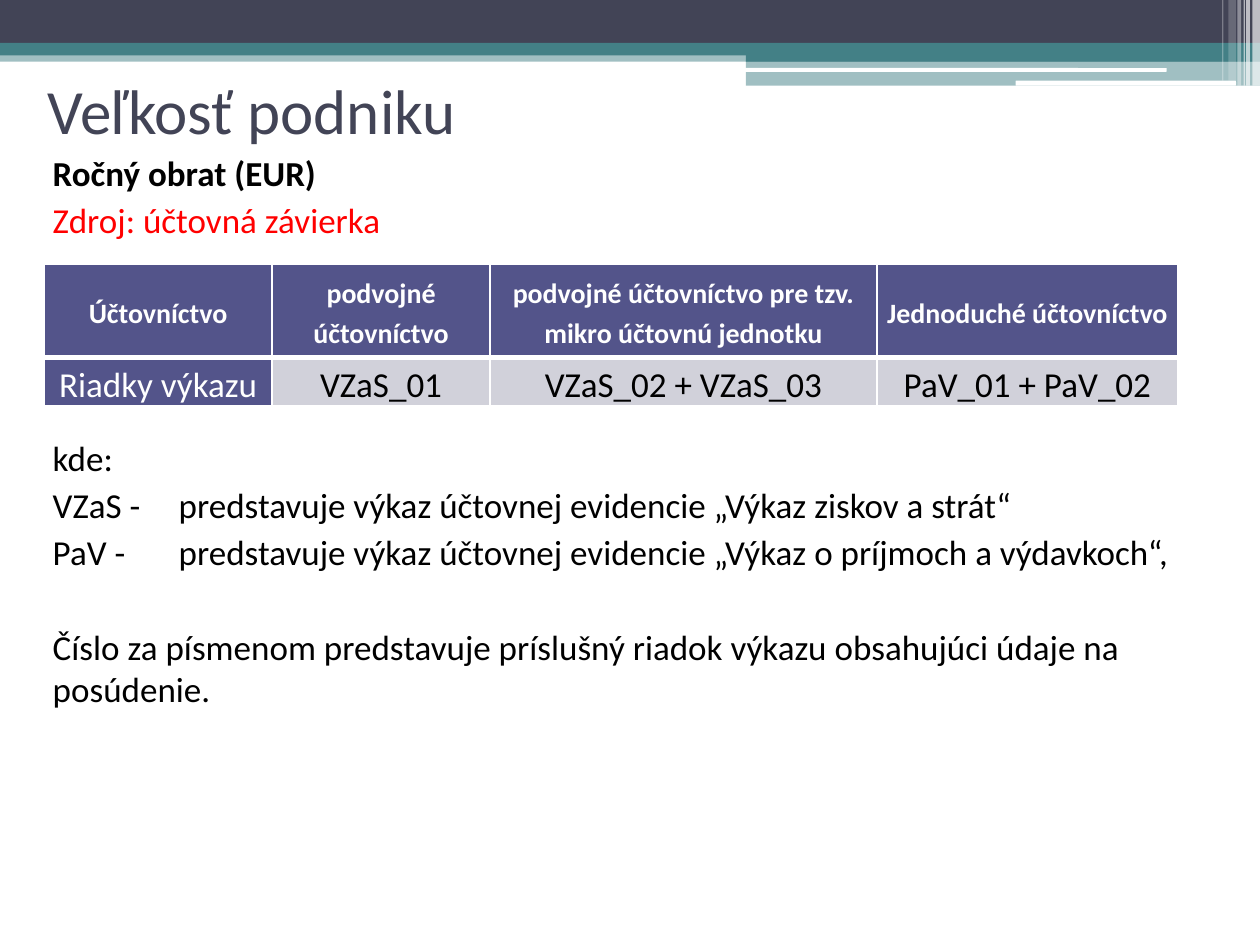
from lxml import etree
from pptx import Presentation
from pptx.dml.color import RGBColor
from pptx.enum.shapes import MSO_SHAPE
from pptx.enum.text import MSO_ANCHOR, PP_ALIGN
from pptx.oxml.ns import qn
from pptx.util import Inches, Pt

RECTANGLE, ROUNDED = MSO_SHAPE.RECTANGLE, MSO_SHAPE.ROUNDED_RECTANGLE
MIDDLE, CENTER = MSO_ANCHOR.MIDDLE, PP_ALIGN.CENTER
WHITE, BLACK, RED = "FFFFFF", "000000", "FF0000"
SLATE, TEAL, INDIGO, PALE = "424456", "438086", "53548A", "D1D1DA"

# The slide is a grid of 10 columns by 7.5 rows, each one inch.
COLUMNS, ROWS = 10, 7.5


def paint(fill, color, opacity=100):
    fill.solid()
    fill.fore_color.rgb = RGBColor.from_string(color)
    if opacity < 100:
        tint = fill._xPr.find(qn("a:solidFill"))[0]
        etree.SubElement(tint, qn("a:alpha"), val=str(opacity * 1000))


def add_span(para, text, size, color, bold=False):
    span = para.add_run()
    span.text = text
    span.font.name = "Calibri"
    span.font.size = Pt(size)
    span.font.bold = bold
    span.font.color.rgb = RGBColor.from_string(color)


deck = Presentation()
deck.slide_width, deck.slide_height = Inches(COLUMNS), Inches(ROWS)
page = deck.slides.add_slide(deck.slide_layouts[6])

# Header bands, white rules, then the vertical stripes at the right edge
right_part = 5.92
bands = [
    (RECTANGLE, 0, 0.4, COLUMNS, 0.09, TEAL, 50),
    (RECTANGLE, 0, 0, COLUMNS, 0.34, SLATE, 100),
    (RECTANGLE, 0, 0.34, COLUMNS, 0.1, TEAL, 100),
    (RECTANGLE, right_part, 0.39, COLUMNS - right_part, 0.1, TEAL, 100),
    (RECTANGLE, right_part, 0.48, COLUMNS - right_part, 0.2, TEAL, 50),
    (ROUNDED, 5.91, 0.54, 3.35, 0.03, WHITE, 100),
    (ROUNDED, 8.06, 0.64, 1.75, 0.04, WHITE, 100),
]
stripes = [
    (9.94, 0.06, 0.68, 65), (9.89, 0.03, 0.68, 65), (9.87, 0.01, 0.68, 60),
    (9.82, 0.03, 0.68, 40), (9.75, 0.06, 0.64, 20), (9.7, 0.01, 0.64, 30),
]
bands += [(RECTANGLE, left, 0, width, height, WHITE, opacity)
          for left, width, height, opacity in stripes]
for kind, left, top, width, height, color, opacity in bands:
    band = page.shapes.add_shape(
        kind, Inches(left), Inches(top), Inches(width), Inches(height))
    band.shadow.inherit = False
    band.line.fill.background()
    paint(band.fill, color, opacity)

# Title
title = page.shapes.add_textbox(Inches(0.28), Inches(0.52), Inches(9), Inches(0.69))
title.text_frame.word_wrap = True
title.text_frame.vertical_anchor = MIDDLE
add_span(title.text_frame.paragraphs[0], "Veľkosť podniku", 36, SLATE)

# Body text; the larger gap before "kde:" leaves room for the table
body = page.shapes.add_textbox(Inches(0.2), Inches(1.15), Inches(9.45), Inches(6.27))
body.text_frame.word_wrap = True
lines = [
    ("Ročný obrat (EUR)", BLACK, True, 3),
    ("Zdroj: účtovná závierka", RED, False, 3),
    ("kde:", BLACK, False, 112),
    ("VZaS - \tpredstavuje výkaz účtovnej evidencie „Výkaz ziskov a strát“", BLACK, False, 3),
    ("PaV - \tpredstavuje výkaz účtovnej evidencie „Výkaz o príjmoch a výdavkoch“,",
     BLACK, False, 3),
    ("Číslo za písmenom predstavuje príslušný riadok výkazu obsahujúci údaje na posúdenie.",
     BLACK, False, 30),
]
for index, (text, color, bold, gap) in enumerate(lines):
    para = body.text_frame.add_paragraph() if index else body.text_frame.paragraphs[0]
    para.space_before = Pt(gap)
    properties = para._p.get_or_add_pPr()
    properties.set("marL", str(Inches(0.12)))
    properties.set("indent", "0")
    add_span(para, text, 20, color, bold)

# Table of report rows by type of accounting
entries = [
    ["Účtovníctvo", "podvojné účtovníctvo",
     "podvojné účtovníctvo pre tzv. mikro účtovnú jednotku", "Jednoduché účtovníctvo"],
    ["Riadky výkazu", "VZaS_01", "VZaS_02 + VZaS_03", "PaV_01 + PaV_02"],
]
column_widths, row_heights = [1.81, 1.73, 3.07, 2.39], [0.74, 0.36]
table = page.shapes.add_table(
    len(row_heights), len(column_widths), Inches(0.35), Inches(2.1),
    Inches(sum(column_widths)), Inches(sum(row_heights))).table
for column, width in zip(table.columns, column_widths):
    column.width = Inches(width)
for row, height in zip(table.rows, row_heights):
    row.height = Inches(height)

for r, texts in enumerate(entries):
    for c, text in enumerate(texts):
        cell = table.cell(r, c)
        is_header, is_label = r == 0, r == 0 or c == 0
        cell.vertical_anchor = MIDDLE
        cell.margin_left = cell.margin_right = Inches(0.05)
        cell.margin_top = cell.margin_bottom = 0
        para = cell.text_frame.paragraphs[0]
        para.alignment = CENTER
        para.line_spacing = 1.15
        add_span(para, text, 16 if is_header else 20,
                 WHITE if is_label else BLACK, is_header)

        # Borders come before the fill in the cell's properties
        thick_side = "lnB" if is_header else "lnT"
        for side in ("lnL", "lnR", "lnT", "lnB"):
            width = Pt(3 if side == thick_side else 1)
            border = etree.SubElement(cell._tc.get_or_add_tcPr(), qn("a:" + side), w=str(width))
            stroke = etree.SubElement(border, qn("a:solidFill"))
            etree.SubElement(stroke, qn("a:srgbClr"), val=WHITE)
        paint(cell.fill, INDIGO if is_label else PALE)

deck.save("out.pptx")
